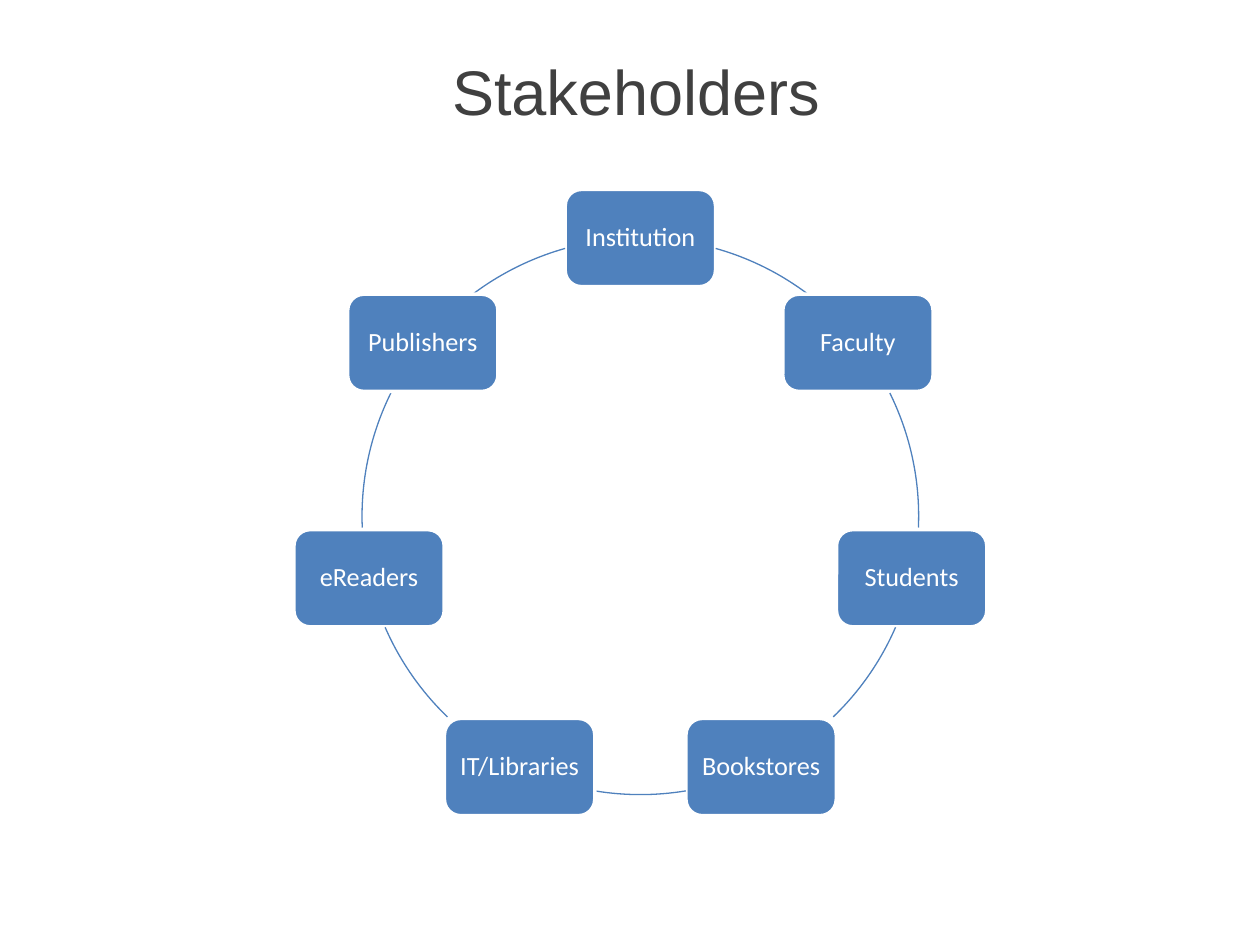
import math
import pptx
import pptx.util
import pptx.dml.color
import pptx.enum.shapes
import pptx.enum.text

Cm, Pt = pptx.util.Cm, pptx.util.Pt
Kind = pptx.enum.shapes.MSO_SHAPE
Align = pptx.enum.text.PP_ALIGN
Anchor = pptx.enum.text.MSO_ANCHOR

TITLE = "Stakeholders"
ROLES = ["Institution", "Faculty", "Students", "Bookstores",
         "IT/Libraries", "eReaders", "Publishers"]
HALF = [(15.7, 36.7), (63.7, 92.3), (113.5, 136.1)]
ARCS = HALF + [(170.6, 189.4)] + [(360 - b, 360 - a) for a, b in HALF]
COLORS = {"title": "404040", "blue": "4F81BD", "white": "FFFFFF"}
MID_X, MID_Y, RADIUS = 12.91, 10.41, 5.61
BOX_W, BOX_H = 3.03, 1.96


def color(name):
    return pptx.dml.color.RGBColor.from_string(COLORS[name])


def write(frame, text, font, size, tint, anchor):
    frame.word_wrap = True
    frame.vertical_anchor = anchor
    para = frame.paragraphs[0]
    para.alignment = Align.CENTER
    run = para.add_run()
    run.text = text
    run.font.name = font
    run.font.size = Pt(size)
    run.font.color.rgb = color(tint)
    return para


def shape(slide, kind, x, y, wide, high, tint, line):
    item = slide.shapes.add_shape(
        kind, Cm(x - wide / 2), Cm(y - high / 2), Cm(wide), Cm(high))
    item.shadow.inherit = False
    item.line.color.rgb = color(tint)
    item.line.width = Pt(line)
    return item


def add_role(slide, index, text):
    turn = math.tau * index / len(ROLES)
    x = MID_X + RADIUS * math.sin(turn)
    y = MID_Y - RADIUS * math.cos(turn)
    box = shape(slide, Kind.ROUNDED_RECTANGLE, x, y, BOX_W, BOX_H, "white", 2)
    box.fill.solid()
    box.fill.fore_color.rgb = color("blue")
    frame = box.text_frame
    frame.margin_left = frame.margin_right = Cm(0.1)
    frame.margin_top = frame.margin_bottom = Cm(0.1)
    para = write(frame, text, "Calibri", 15, "white", Anchor.MIDDLE)
    para.line_spacing = 0.9


def add_arc(slide, start, end):
    arc = shape(slide, Kind.ARC, MID_X, MID_Y,
                2 * RADIUS, 2 * RADIUS, "blue", 0.75)
    arc.fill.background()
    for index, angle in enumerate((start, end)):
        arc.adjustments[index] = (angle - 90) % 360 * 0.6


def main():
    deck = pptx.Presentation()
    deck.slide_width, deck.slide_height = Cm(25.4), Cm(19.05)
    slide = deck.slides.add_slide(deck.slide_layouts[5])
    title = slide.shapes.title
    title.left, title.top = Cm(1.68), Cm(0.94)
    title.width, title.height = Cm(22.28), Cm(2.03)
    write(title.text_frame, TITLE, "Arial", 36, "title", Anchor.TOP)
    for index, (role, arc) in enumerate(zip(ROLES, ARCS)):
        add_role(slide, index, role)
        add_arc(slide, *arc)
    deck.save("out.pptx")


if __name__ == "__main__":
    main()
